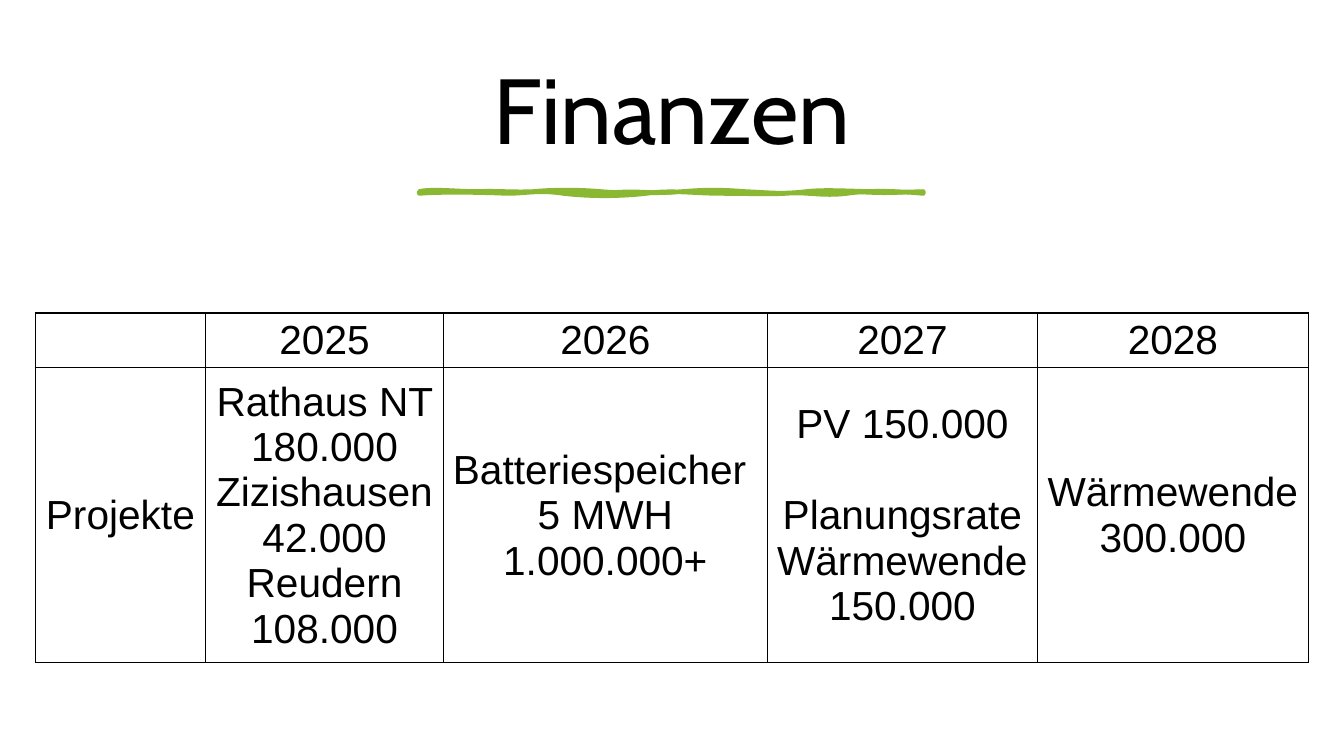
from dataclasses import dataclass

from lxml import etree
from pptx import Presentation
from pptx.dml.color import RGBColor
from pptx.enum.text import MSO_ANCHOR, PP_ALIGN
from pptx.oxml.ns import qn
from pptx.util import Pt

CENTER = PP_ALIGN.CENTER
MIDDLE = MSO_ANCHOR.MIDDLE


@dataclass(frozen=True)
class Theme:
    ink: str = "000000"
    paper: str = "FFFFFF"
    green: str = "8AB833"
    title_font: str = "Cabin"
    table_font: str = "Arial"
    title_size: float = 66
    table_size: float = 29
    border: float = 1
    stroke: float = 3.25


@dataclass(frozen=True)
class Contour:
    """Closed curve from (0, 0); each row holds two control points and an end point."""
    curves: list[tuple[float, ...]]
    paint: dict[str, str]


THEME = Theme()
BRUSH_LEFT, BRUSH_TOP = 299.5, 136.8
COLUMN_WIDTHS = [121.7, 170, 231.2, 193.2, 193.2]
ROW_HEIGHTS = [38.9, 211]
CELL_INSET = 0.72
PARAGRAPH_GAP = 32.5

# Each cell is a list of paragraphs, each paragraph a list of lines.
ROWS = [
    [[], [["2025"]], [["2026"]], [["2027"]], [["2028"]]],
    [
        [["Projekte"]],
        [["Rathaus NT 180.000", "Zizishausen 42.000", "Reudern 108.000"]],
        [["Batteriespeicher ", "5 MWH", "1.000.000+"]],
        [["PV 150.000"], ["Planungsrate Wärmewende 150.000"]],
        [["Wärmewende 300.000"]],
    ],
]

BRUSH = [
    Contour([
        (8.6, -2.2, 27.4, 0, 41, 0),
        (54.7, -0.7, 67, 0.7, 81.4, 0),
        (95.8, -1.4, 113.8, -1.4, 129.6, 0),
        (144.7, 1.4, 170.6, 1.4, 187.9, 0),
        (205.9, -1.4, 214.6, -1.4, 232.6, 0),
        (249.8, 0.7, 257.8, 2.2, 276.5, 0),
        (295.2, -2.2, 324.7, 1.4, 360, 0),
        (360.7, 0.7, 360, 0.7, 360, 1.4),
        (344.9, 0, 323.3, -1.4, 305.3, 1.4),
        (287.3, 3.6, 277.2, 0, 261.4, 1.4),
        (244.8, 2.2, 238.3, 1.4, 216.7, 1.4),
        (195.1, 1.4, 180.7, -1.4, 162, 1.4),
        (142.6, 3.6, 121.7, 3.6, 103, 1.4),
        (85, -1.4, 77, 1.4, 62.6, 1.4),
        (48.2, 0.7, 15.8, 0, 0, 1.4),
        (0, 0.7, 0, 0, 0, 0),
    ], paint={"fill": "none"}),
    Contour([
        (11.5, -0.7, 25.9, -1.4, 44.6, 0),
        (62.6, 0.7, 66.2, 1.4, 85, 0),
        (103.7, -1.4, 113.8, 1.4, 129.6, 0),
        (145.4, -2.2, 160.6, -1.4, 180.7, 0),
        (200.9, 0.7, 221.8, -2.2, 236.2, 0),
        (249.8, 1.4, 277.9, -1.4, 294.5, 0),
        (311, 0.7, 328.3, 2.2, 360, 0),
        (360, 0, 360, 0.7, 360, 1.4),
        (333.4, 2.9, 331.2, 2.9, 305.3, 1.4),
        (279.4, -0.7, 273.6, 0.7, 247, 1.4),
        (219.6, 1.4, 216, -1.4, 187.9, 1.4),
        (160.6, 4.3, 159.1, 0, 147.6, 1.4),
        (135.4, 2.2, 112.3, 2.2, 92.2, 1.4),
        (72.7, 0, 63.4, 0.7, 44.6, 1.4),
        (25.9, 1.4, 18, -0.7, 0, 1.4),
        (0, 0.7, 0, 0, 0, 0),
    ], paint={"stroke": "0"}),
]


def add_span(para, text: str, font: str, size: float) -> None:
    span = para.add_run()
    span.text = text
    span.font.name = font
    span.font.size = Pt(size)
    span.font.color.rgb = RGBColor.from_string(THEME.ink)


def add_title(page, text: str) -> None:
    box = page.shapes.add_textbox(Pt(50.4), Pt(32.6), Pt(859), Pt(98.6))
    frame = box.text_frame
    frame.word_wrap = True
    frame.vertical_anchor = MIDDLE
    para = frame.paragraphs[0]
    para.alignment = CENTER
    para.line_spacing = 0.9
    add_span(para, text, THEME.title_font, THEME.title_size)


def add_point(parent, x: float, y: float) -> None:
    etree.SubElement(parent, qn("a:pt"), x=str(Pt(x)), y=str(Pt(y)))


def add_contour(outlines, contour: Contour, size: dict[str, str]) -> None:
    outline = etree.SubElement(outlines, qn("a:path"), {**size, **contour.paint})
    add_point(etree.SubElement(outline, qn("a:moveTo")), 0, 0)
    for curve in contour.curves:
        bezier = etree.SubElement(outline, qn("a:cubicBezTo"))
        for x, y in zip(curve[::2], curve[1::2]):
            add_point(bezier, x, y)
    etree.SubElement(outline, qn("a:close"))


def add_brush(page, contours: list[Contour]) -> None:
    """Build the frame from the curve ends, then give it curved contours."""
    builder = page.shapes.build_freeform(Pt(BRUSH_LEFT), Pt(BRUSH_TOP))
    builder.add_line_segments([(Pt(BRUSH_LEFT + curve[4]), Pt(BRUSH_TOP + curve[5]))
                               for curve in contours[0].curves])
    shape = builder.convert_to_shape()
    outlines = shape._element.find(".//" + qn("a:pathLst"))
    size = {side: outlines[0].get(side) for side in ("w", "h")}
    outlines.remove(outlines[0])
    for contour in contours:
        add_contour(outlines, contour, size)
    green = RGBColor.from_string(THEME.green)
    shape.shadow.inherit = False
    shape.fill.solid()
    shape.fill.fore_color.rgb = green
    shape.line.color.rgb = green
    shape.line.width = Pt(THEME.stroke)


def add_borders(cell) -> None:
    properties = cell._tc.get_or_add_tcPr()
    for position, side in enumerate(("a:lnL", "a:lnR", "a:lnT", "a:lnB")):
        line = etree.Element(qn(side), w=str(Pt(THEME.border)))
        fill = etree.SubElement(line, qn("a:solidFill"))
        etree.SubElement(fill, qn("a:srgbClr"), val=THEME.ink)
        properties.insert(position, line)


def fill_cell(cell, paragraphs: list[list[str]]) -> None:
    cell.fill.solid()
    cell.fill.fore_color.rgb = RGBColor.from_string(THEME.paper)
    cell.vertical_anchor = MIDDLE
    cell.margin_left = cell.margin_right = cell.margin_top = Pt(CELL_INSET)
    cell.margin_bottom = Pt(0)
    add_borders(cell)
    frame = cell.text_frame
    for index, lines in enumerate(paragraphs):
        para = frame.add_paragraph() if index else frame.paragraphs[0]
        para.alignment = CENTER
        if index:
            para.space_before = Pt(PARAGRAPH_GAP)
        for number, text in enumerate(lines):
            if number:
                para.add_line_break()
            add_span(para, text, THEME.table_font, THEME.table_size)


def add_finance_table(page) -> None:
    table = page.shapes.add_table(
        len(ROW_HEIGHTS), len(COLUMN_WIDTHS), Pt(25.2), Pt(223.5),
        Pt(sum(COLUMN_WIDTHS)), Pt(sum(ROW_HEIGHTS))).table
    for column, width in zip(table.columns, COLUMN_WIDTHS):
        column.width = Pt(width)
    for row, height, contents in zip(table.rows, ROW_HEIGHTS, ROWS):
        row.height = Pt(height)
        for cell, paragraphs in zip(row.cells, contents):
            fill_cell(cell, paragraphs)


def main() -> None:
    deck = Presentation()
    deck.slide_width, deck.slide_height = Pt(960), Pt(540)
    page = deck.slides.add_slide(deck.slide_layouts[6])
    add_title(page, "Finanzen")
    add_brush(page, BRUSH)
    add_finance_table(page)
    deck.save("out.pptx")


if __name__ == "__main__":
    main()
